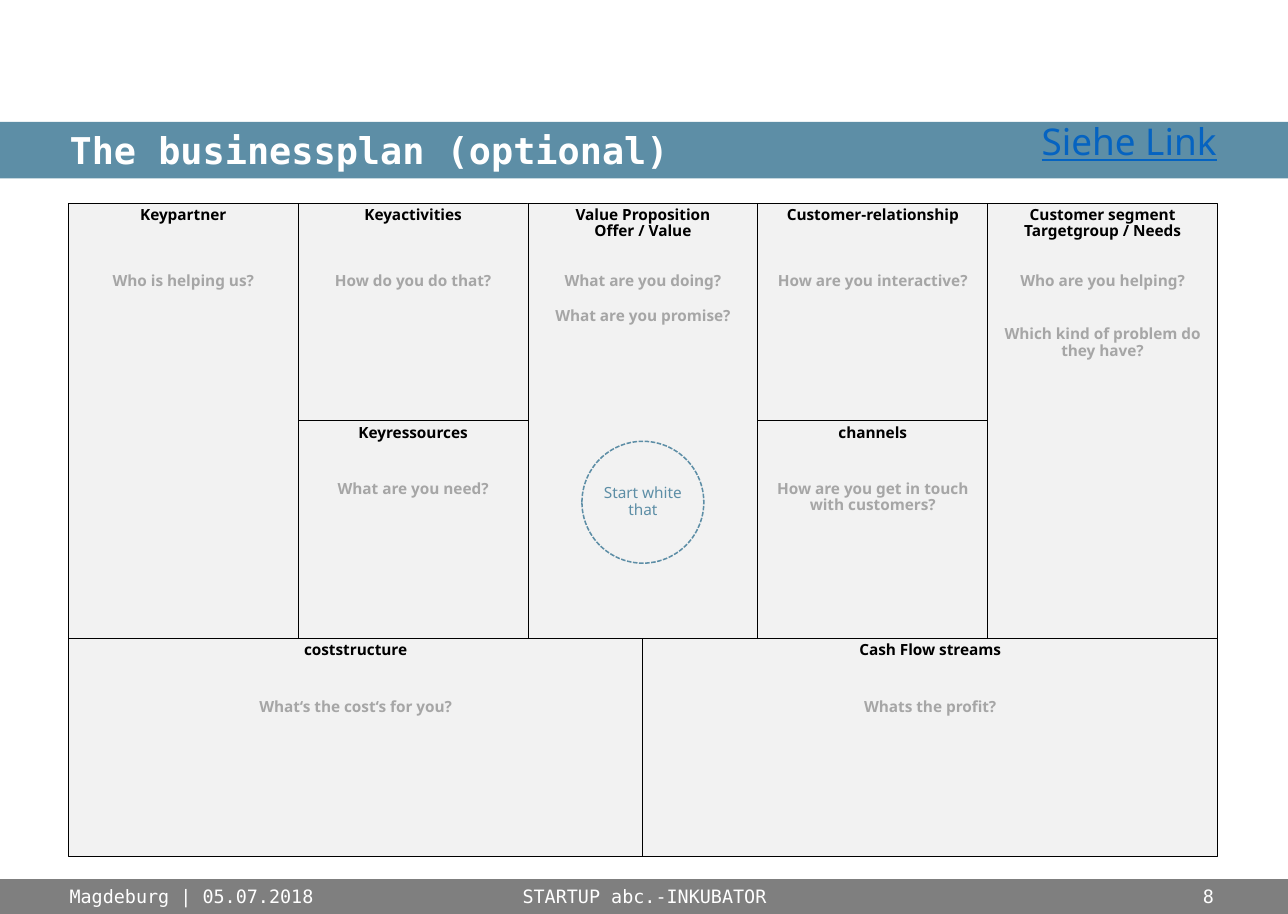
from pptx import Presentation
from pptx.dml.color import RGBColor
from pptx.enum.dml import MSO_LINE
from pptx.enum.shapes import MSO_SHAPE
from pptx.enum.text import MSO_ANCHOR, PP_ALIGN
from pptx.util import Cm, Pt

RECT, OVAL = MSO_SHAPE.RECTANGLE, MSO_SHAPE.OVAL
LEFT, CENTER, RIGHT = PP_ALIGN.LEFT, PP_ALIGN.CENTER, PP_ALIGN.RIGHT
TOP, MIDDLE = MSO_ANCHOR.TOP, MSO_ANCHOR.MIDDLE
DASH = MSO_LINE.SQUARE_DOT
SANS, MONO = "Noto Sans", "DejaVu Sans Mono"
BLUE, GREY, WHITE = "5D8EA6", "7F7F7F", "FFFFFF"
WIDTH, HEIGHT = 29.59, 21
TITLE_BAR = (0, 2.8, WIDTH, 1.3)
CANVAS = (1.57, 4.67, 26.4, 15)
FOOTER = (0, 20.2, WIDTH, 0.8)

CELLS = [
    (0, 0, 1, 2, "Keypartner", "Who is helping us?", 0),
    (1, 0, 1, 1, "Keyactivities", "How do you do that?", 0),
    (2, 0, 1, 2, "Value Proposition\vOffer / Value",
     "What are you doing?\nWhat are you promise?", 12),
    (3, 0, 1, 1, "Customer-relationship", "How are you interactive?", 0),
    (4, 0, 1, 2, "Customer segment\nTargetgroup / Needs",
     "Who are you helping?\nWhich kind of problem do they have?", 24),
    (1, 1, 1, 1, "Keyressources", "What are you need?", 0),
    (3, 1, 1, 1, "channels", "How are you get in touch with customers?", 0),
    (0, 2, 2.5, 1, "coststructure", "What‘s the cost‘s for you?", 0),
    (2.5, 2, 2.5, 1, "Cash Flow streams", "Whats the profit?", 0),
]


def rgb(value):
    return RGBColor.from_string(value)


def write(sp, text, size=10, font=SANS, color="000000", bold=False,
          underline=False, align=CENTER, anchor=TOP, inset=0, left=None,
          gap=0, spacing=None):
    tf = sp.text_frame
    tf.word_wrap = True
    tf.vertical_anchor = anchor
    tf.margin_left = Cm(inset if left is None else left)
    tf.margin_top = tf.margin_right = tf.margin_bottom = Cm(inset)
    for i, line in enumerate(text.split("\n")):
        p = tf.add_paragraph() if i else tf.paragraphs[0]
        p.text = line
        p.alignment = align
        p.line_spacing = spacing
        p.space_before = Pt(gap if i else 0)
        for r in p.runs:
            r.font.size = Pt(size)
            r.font.name = font
            r.font.bold = bold
            r.font.underline = underline
            r.font.color.rgb = rgb(color)


def add_box(s, box, kind=RECT, fill=None, line=None, weight=0.5):
    sp = s.shapes.add_shape(kind, *map(Cm, box))
    sp.shadow.inherit = False
    if fill:
        sp.fill.solid()
        sp.fill.fore_color.rgb = rgb(fill)
    else:
        sp.fill.background()
    if line:
        sp.line.color.rgb = rgb(line)
        sp.line.width = Pt(weight)
    else:
        sp.line.fill.background()
    return sp


def add_text(s, box, text, **fmt):
    write(s.shapes.add_textbox(*map(Cm, box)), text, **fmt)


def add_title_bar(s, box):
    x, y, w, h = box
    write(add_box(s, box, fill=BLUE), "The businessplan (optional)", size=24,
          font=MONO, color=WHITE, bold=True, align=LEFT, anchor=MIDDLE,
          left=1.6)
    add_text(s, (x + w - 6.2, y, 5.1, h), "Siehe Link", size=24,
             color="0563C1", underline=True, spacing=0.95)


def add_canvas(s, box):
    x, y, w, h = box
    col_w, row_h = w / 5, h / 3
    for col, row, cols, rows, heading, question, gap in CELLS:
        left, top, width = x + col * col_w, y + row * row_h, cols * col_w
        sp = add_box(s, (left, top, width, rows * row_h), fill="F2F2F2",
                     line="000000")
        write(sp, heading, bold=True, inset=0.1, spacing=0.88)
        offset = 1.3 if row else 1.52
        add_text(s, (left, top + offset, width, 3.48 if gap else 2.5),
                 question, color="A6A6A6", bold=True, inset=0.1, gap=gap,
                 spacing=0.88)
    size = 2.8
    sp = add_box(s, (x + (w - size) / 2, y + 5.47, size, size), OVAL,
                 line=BLUE, weight=1)
    sp.line.dash_style = DASH
    write(sp, "Start white that", color=BLUE, anchor=MIDDLE, spacing=0.88)


def add_footer(s, box):
    x, y, w, h = box
    add_box(s, box, fill=GREY)
    for left, width, text, align in (
        (1.6, 6.9, "Magdeburg | 05.07.2018", LEFT),
        (10.82, 7.98, "STARTUP abc.-INKUBATOR", CENTER),
        (25.91, 1.98, "8", RIGHT),
    ):
        add_text(s, (x + left, y, width, h), text, size=12, font=MONO,
                 color=WHITE, align=align, anchor=MIDDLE)


def main():
    prs = Presentation()
    prs.slide_width, prs.slide_height = Cm(WIDTH), Cm(HEIGHT)
    s = prs.slides.add_slide(prs.slide_layouts[6])
    add_title_bar(s, TITLE_BAR)
    add_canvas(s, CANVAS)
    add_footer(s, FOOTER)
    prs.save("out.pptx")


if __name__ == "__main__":
    main()
